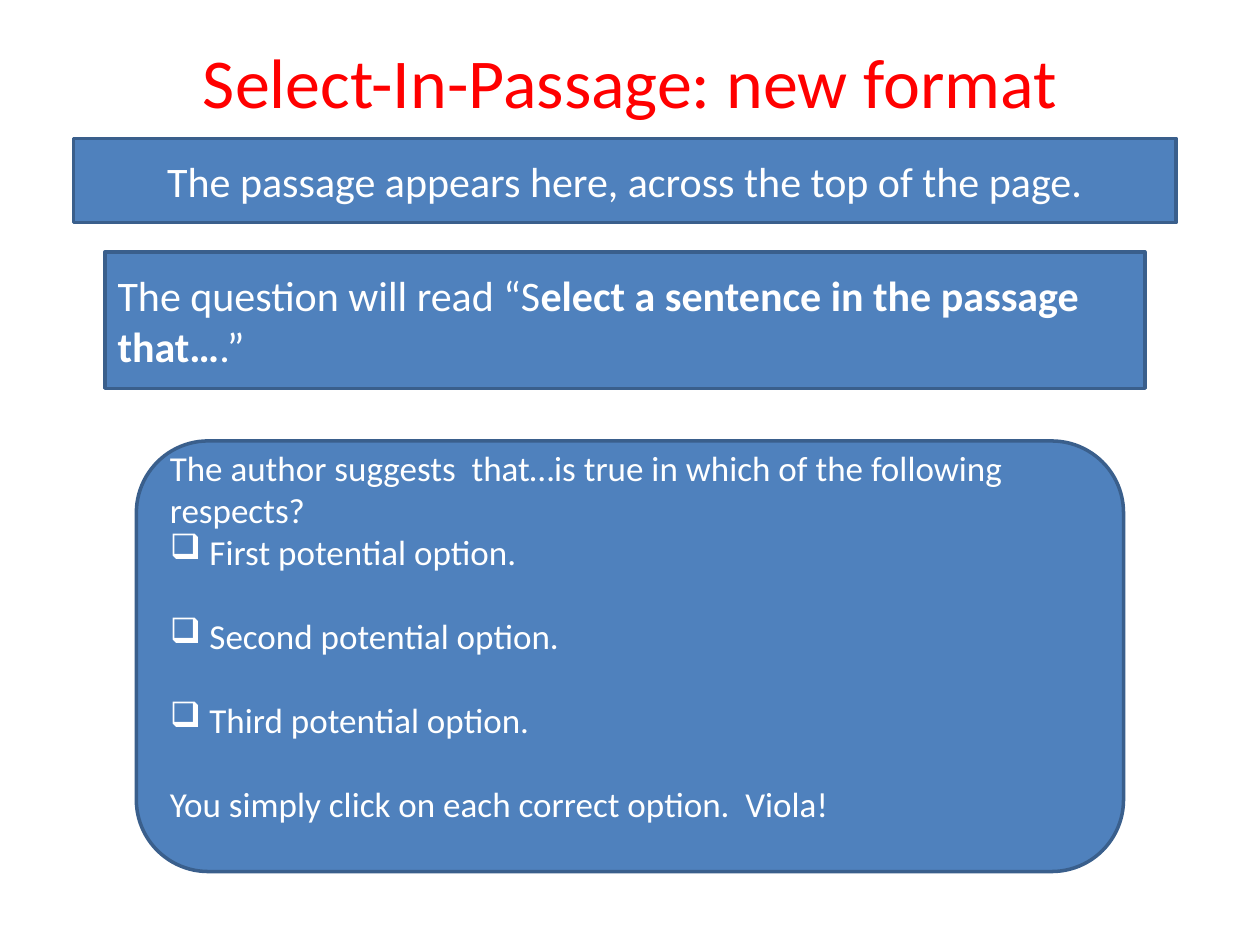
"""Build the slide on the new Select-In-Passage format."""
import pptx
import pptx.util
import pptx.dml.color
import pptx.enum.shapes
import pptx.enum.text
import pptx.oxml
import pptx.oxml.ns

Cm, Pt = pptx.util.Cm, pptx.util.Pt
KIND = pptx.enum.shapes.MSO_SHAPE
ALIGN = pptx.enum.text.PP_ALIGN
ANCHOR = pptx.enum.text.MSO_ANCHOR
COLORS = {"title": "FF0000", "fill": "4F81BD", "edge": "3A5F8C", "text": "FFFFFF"}
OPTIONS = ["First potential option.", "Second potential option.", "Third potential option."]


def tint(name):
    return pptx.dml.color.RGBColor.from_string(COLORS[name])


def style(para, size, color="text", align=ALIGN.LEFT):
    para.alignment = align
    for run in para.runs:
        run.font.name = "Calibri"
        run.font.size = Pt(size)
        run.font.color.rgb = tint(color)


def add_title(slide, text):
    title = slide.shapes.title
    title.left, title.top = Cm(0.85), Cm(0.64)
    title.width, title.height = Cm(23.7), Cm(17.36)
    frame = title.text_frame
    frame.text = text
    frame.vertical_anchor = ANCHOR.TOP
    style(frame.paragraphs[0], 40, "title", ALIGN.CENTER)


def add_box(slide, kind, left, top, width, height):
    box = slide.shapes.add_shape(kind, Cm(left), Cm(top), Cm(width), Cm(height))
    box.shadow.inherit = False
    box.fill.solid()
    box.fill.fore_color.rgb = tint("fill")
    box.line.color.rgb = tint("edge")
    box.line.width = Pt(2)
    frame = box.text_frame
    frame.word_wrap = True
    frame.vertical_anchor = ANCHOR.MIDDLE
    return frame


def add_check(para):
    props = para._p.get_or_add_pPr()
    props.set("marL", str(Cm(0.8)))
    props.set("indent", str(-Cm(0.8)))
    mark = f'<a:buChar {pptx.oxml.ns.nsdecls("a")} char="❑"/>'
    props.append(pptx.oxml.parse_xml(mark))


def fill_passage(frame):
    frame.text = "The passage appears here, across the top of the page."
    style(frame.paragraphs[0], 24, align=ALIGN.CENTER)


def fill_query(frame):
    para = frame.paragraphs[0]
    parts = ["The question will read “S", "elect a sentence in the passage that…", ".”"]
    for part in parts:
        para.add_run().text = part
    para.runs[1].font.bold = True
    style(para, 24)


def fill_options(frame):
    frame.margin_top, frame.margin_bottom = Cm(0), Cm(0.85)
    first = "The author suggests  that…is true in which of the following respects?"
    last = "You simply click on each correct option.  Viola!"
    frame.text = "\n".join([first, *OPTIONS, last])
    for para in frame.paragraphs:
        style(para, 20)
        if para.text in OPTIONS:
            para.space_after = Pt(24)
            add_check(para)


def main():
    deck = pptx.Presentation()
    deck.slide_width, deck.slide_height = Cm(25.4), Cm(19.05)
    slide = deck.slides.add_slide(deck.slide_layouts[5])
    add_title(slide, "Select-In-Passage: new format")
    fill_passage(add_box(slide, KIND.RECTANGLE, 1.48, 2.79, 22.23, 1.7))
    fill_query(add_box(slide, KIND.RECTANGLE, 2.12, 5.08, 20.96, 2.75))
    fill_options(add_box(slide, KIND.ROUNDED_RECTANGLE, 2.75, 8.89, 19.9, 8.68))
    deck.save("out.pptx")


if __name__ == "__main__":
    main()
